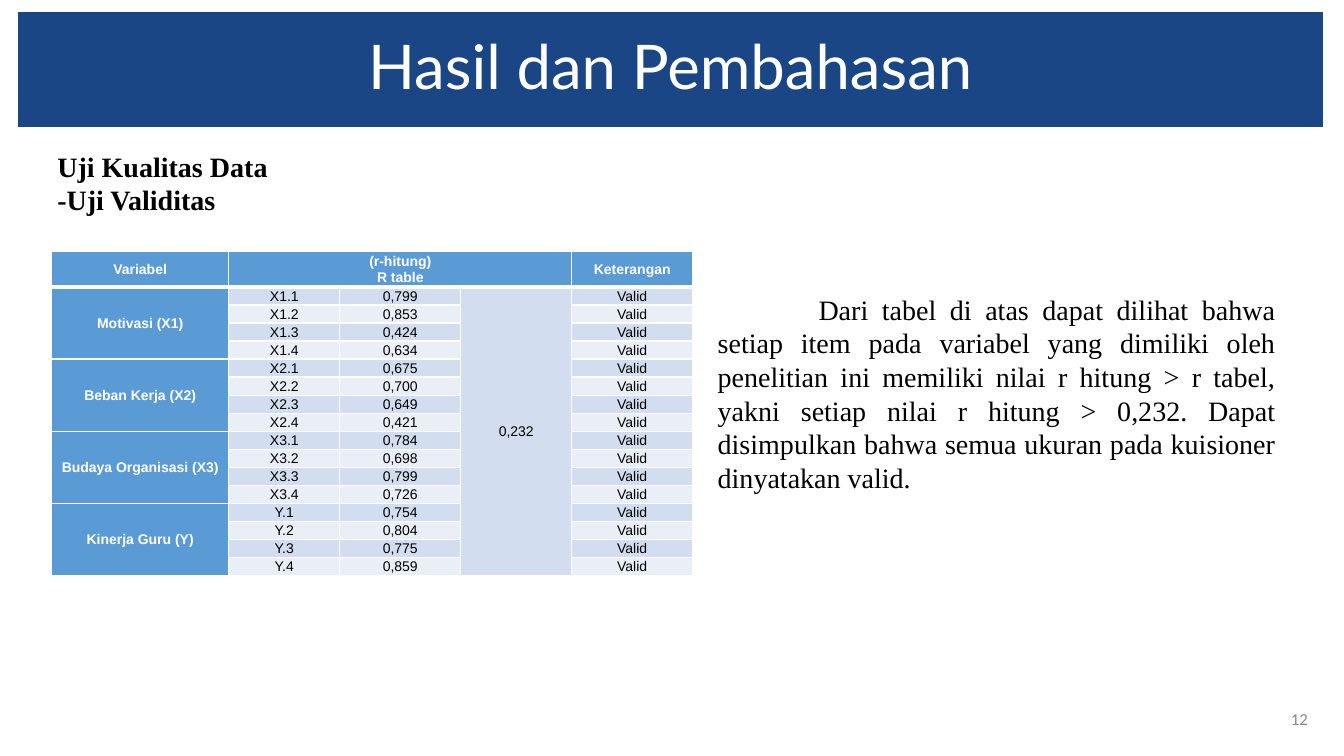
from dataclasses import dataclass

from lxml import etree
from pptx import Presentation
from pptx.dml.color import RGBColor
from pptx.enum.shapes import MSO_SHAPE
from pptx.enum.text import MSO_ANCHOR, PP_ALIGN
from pptx.oxml.ns import qn
from pptx.util import Inches, Pt

RECT = MSO_SHAPE.RECTANGLE
MIDDLE = MSO_ANCHOR.MIDDLE
LEFT, CENTER, RIGHT, JUSTIFY = (
    PP_ALIGN.LEFT, PP_ALIGN.CENTER, PP_ALIGN.RIGHT, PP_ALIGN.JUSTIFY)


@dataclass(frozen=True)
class Theme:
    """Colours, fonts and type sizes of the slide."""
    navy: str = "1B4685"
    blue: str = "5B9BD5"
    band: str = "D2DEEF"
    pale: str = "EAEFF7"
    white: str = "FFFFFF"
    black: str = "000000"
    gray: str = "888888"
    head: str = "Lato"
    body: str = "Times New Roman"
    grid: str = "Arial"
    foot: str = "Calibri"
    title: int = 44
    text: int = 20
    page: int = 12
    cell: int = 10


THEME = Theme()
COLS = [1.76, 1.1, 1.2, 1.1, 1.2]
HEAD_H, ROW_H = 0.32, 0.16
LIMIT = "0,232"
GROUPS = [
    ("Motivasi (X1)", "X1", ["0,799", "0,853", "0,424", "0,634"]),
    ("Beban Kerja (X2)", "X2", ["0,675", "0,700", "0,649", "0,421"]),
    ("Budaya Organisasi (X3)", "X3", ["0,784", "0,698", "0,799", "0,726"]),
    ("Kinerja Guru (Y)", "Y", ["0,754", "0,804", "0,775", "0,859"]),
]
NOTE = ("Dari tabel di atas dapat dilihat bahwa setiap item pada variabel "
        "yang dimiliki oleh penelitian ini memiliki nilai r hitung > r tabel, "
        "yakni setiap nilai r hitung > 0,232. Dapat disimpulkan bahwa semua "
        "ukuran pada kuisioner dinyatakan valid.")


def write(frame, lines, face, size, color, align, bold=False, space=1.0):
    """Fill a text frame with evenly styled paragraphs."""
    frame.text = "\n".join(lines)
    frame.word_wrap = True
    for para in frame.paragraphs:
        para.alignment = align
        para.line_spacing = space
        font = para.font
        font.name, font.size, font.bold = face, Pt(size), bold
        font.color.rgb = RGBColor.from_string(color)


def add_text(slide, box, lines, *style, **more):
    """Add a vertically centred text box and return its frame."""
    frame = slide.shapes.add_textbox(*map(Inches, box)).text_frame
    frame.vertical_anchor = MIDDLE
    write(frame, lines, *style, **more)
    return frame


def add_title(slide, box, text):
    """Add the title band."""
    band = slide.shapes.add_shape(RECT, *map(Inches, box))
    band.shadow.inherit = False
    band.fill.solid()
    band.fill.fore_color.rgb = RGBColor.from_string(THEME.navy)
    band.line.fill.background()
    band.text_frame.vertical_anchor = MIDDLE
    write(band.text_frame, [text], THEME.head, THEME.title, THEME.white,
          CENTER, space=0.9)


def edge(cell, side, width):
    """Draw a white border on one side of a cell."""
    line = etree.SubElement(cell._tc.get_or_add_tcPr(), qn(f"a:ln{side}"),
                            w=str(Pt(width)))
    fill = etree.SubElement(line, qn("a:solidFill"))
    etree.SubElement(fill, qn("a:srgbClr"), val=THEME.white)


def paint(cell, row, lines, fill, key=False):
    """Style one cell; key cells are bold and white."""
    for side in "LRTB":
        thick = (row, side) in ((0, "B"), (1, "T"))
        edge(cell, side, 3 if thick else 1)
    cell.fill.solid()
    cell.fill.fore_color.rgb = RGBColor.from_string(fill)
    cell.margin_left = cell.margin_right = Inches(0.07)
    cell.margin_top = cell.margin_bottom = 0
    cell.vertical_anchor = MIDDLE
    write(cell.text_frame, lines, THEME.grid, THEME.cell,
          THEME.white if key else THEME.black, CENTER, key, 1.07)


def add_grid(slide, left, top):
    """Add the validity table."""
    count = sum(len(vals) for _, _, vals in GROUPS)
    size = sum(COLS), HEAD_H + count * ROW_H
    grid = slide.shapes.add_table(
        count + 1, len(COLS), *map(Inches, (left, top, *size))).table
    grid.horz_banding = False
    for col, width in zip(grid.columns, COLS):
        col.width = Inches(width)
    for i, row in enumerate(grid.rows):
        row.height = Inches(ROW_H if i else HEAD_H)

    heads = [["Variabel"], ["(r-hitung)", "R table"], [], [], ["Keterangan"]]
    for c, lines in enumerate(heads):
        paint(grid.cell(0, c), 0, lines, THEME.blue, True)
    row = 1
    for name, code, vals in GROUPS:
        start = row
        for n, val in enumerate(vals, 1):
            fill = THEME.band if row % 2 else THEME.pale
            paint(grid.cell(row, 0), row, [name] if n == 1 else [],
                  THEME.blue, True)
            paint(grid.cell(row, 3), row, [LIMIT] if row == 1 else [],
                  THEME.band)
            for c, text in ((1, f"{code}.{n}"), (2, val), (4, "Valid")):
                paint(grid.cell(row, c), row, [text], fill)
            row += 1
        grid.cell(start, 0).merge(grid.cell(row - 1, 0))
    grid.cell(0, 1).merge(grid.cell(0, 3))
    grid.cell(1, 3).merge(grid.cell(count, 3))


def add_note(slide, box):
    """Add the conclusion with an indented first line."""
    frame = add_text(slide, box, [NOTE], THEME.body, THEME.text,
                     THEME.black, JUSTIFY)
    props = frame.paragraphs[0]._p.get_or_add_pPr()
    props.set("marL", "0")
    props.set("indent", str(Inches(1)))


def main():
    """Build and save the slide."""
    deck = Presentation()
    deck.slide_width, deck.slide_height = Inches(13.33), Inches(7.5)
    slide = deck.slides.add_slide(deck.slide_layouts[6])
    add_title(slide, (0.18, 0.12, 12.94, 1.14), "Hasil dan Pembahasan")
    add_text(slide, (0.47, 1.43, 3.04, 0.77),
             ["Uji Kualitas Data", "-Uji Validitas"],
             THEME.body, THEME.text, THEME.black, JUSTIFY, bold=True)
    add_grid(slide, 0.51, 2.49)
    add_note(slide, (7.02, 2.84, 5.73, 2.12))
    add_text(slide, (12.5, 6.93, 0.57, 0.4), ["12"],
             THEME.foot, THEME.page, THEME.gray, RIGHT)
    deck.save("out.pptx")


if __name__ == "__main__":
    main()
